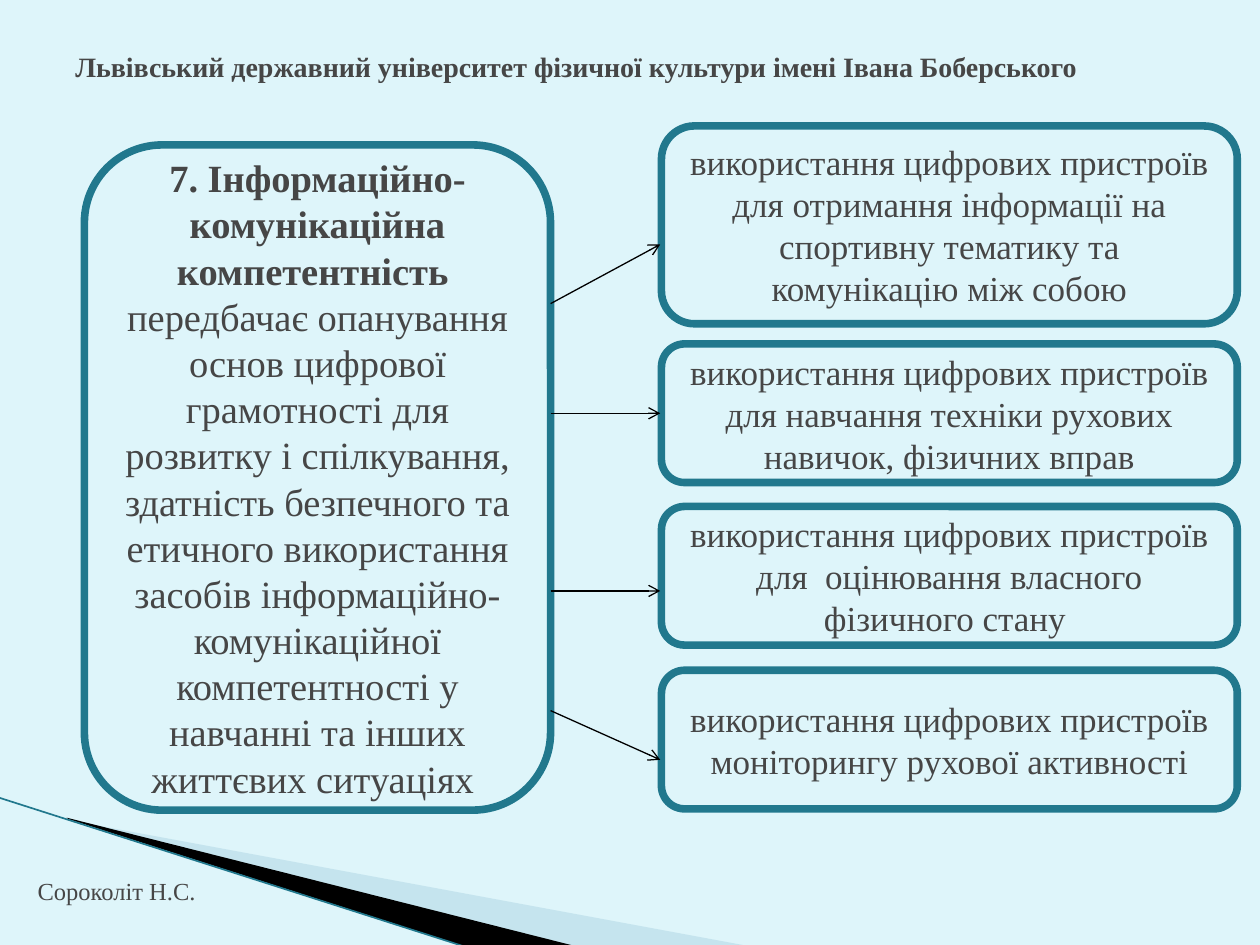
from lxml import etree
from pptx import Presentation
from pptx.dml.color import RGBColor
from pptx.enum.shapes import MSO_CONNECTOR, MSO_SHAPE
from pptx.enum.text import MSO_ANCHOR, PP_ALIGN
from pptx.oxml.ns import qn
from pptx.util import Inches, Pt

ROUND = MSO_SHAPE.ROUNDED_RECTANGLE
LINE = MSO_CONNECTOR.STRAIGHT
MID = MSO_ANCHOR.MIDDLE
TOP = MSO_ANCHOR.TOP
LEFT = PP_ALIGN.LEFT
MIDDLE = PP_ALIGN.CENTER
PALE = RGBColor(0xDE, 0xF5, 0xFA)
MIST = RGBColor(0xA0, 0xCB, 0xDC)
TEAL = RGBColor(0x21, 0x78, 0x8D)
GREY = RGBColor(0x46, 0x46, 0x46)
BLACK = RGBColor(0, 0, 0)


def write(shape, *lines, size=20, bold=False, align=MIDDLE, anchor=MID, wrap=True):
    frame = shape.text_frame
    frame.word_wrap = wrap
    frame.vertical_anchor = anchor
    for i, line in enumerate(lines):
        para = frame.paragraphs[0] if i == 0 else frame.add_paragraph()
        para.alignment = align
        run = para.add_run()
        run.text = line
        run.font.name = "Times New Roman"
        run.font.size = Pt(size)
        run.font.bold = bold and i == 0
        run.font.color.rgb = GREY


def connect(x1, y1, x2, y2, color, width):
    line = slide.shapes.add_connector(LINE, Inches(x1), Inches(y1), Inches(x2), Inches(y2))
    line.line.color.rgb = color
    line.line.width = Pt(width)
    etree.SubElement(line._element.spPr, qn("a:effectLst"))
    return line


deck = Presentation()
deck.slide_width = Inches(10)
deck.slide_height = Inches(7.5)
slide = deck.slides.add_slide(deck.slide_layouts[6])
slide.background.fill.solid()
slide.background.fill.fore_color.rgb = PALE

wedges = [
    ([(0.55, 6.51), (5.95, 7.51), (4.56, 7.51), (0.55, 6.5)], MIST),
    ([(0.53, 6.49), (4.57, 7.51), (3.72, 7.52), (0.54, 6.5)], BLACK),
]
for points, color in wedges:
    spots = [(Inches(x), Inches(y)) for x, y in points]
    path = slide.shapes.build_freeform(*spots[0], scale=1.0)
    path.add_line_segments(spots[1:], close=True)
    wedge = path.convert_to_shape()
    wedge.shadow.inherit = False
    wedge.fill.solid()
    wedge.fill.fore_color.rgb = color
    wedge.line.fill.background()
    if color == MIST:
        tint = wedge._element.spPr.find(".//" + qn("a:srgbClr"))
        etree.SubElement(tint, qn("a:alpha"), val="40000")
connect(-0.01, 6.33, 3.71, 7.52, TEAL, 0.95)

title = slide.shapes.add_textbox(Inches(0.5), Inches(0.3), Inches(9), Inches(0.46))
write(title, "Львівський державний університет фізичної культури імені Івана Боберського",
      size=16, bold=True, align=LEFT)
author = slide.shapes.add_textbox(Inches(0.2), Inches(6.9), Inches(1.47), Inches(0.34))
write(author, "Сороколіт Н.С.", size=14, align=LEFT, anchor=TOP, wrap=False)

skill = [
    "7. Інформаційно-комунікаційна компетентність ",
    "передбачає опанування основ цифрової грамотності для розвитку і спілкування, "
    "здатність безпечного та етичного використання засобів "
    "інформаційно-комунікаційної компетентності у навчанні та інших життєвих ситуаціях ",
]
USE = "використання цифрових пристроїв "
cards = [
    (0.67, 1.15, 3.7, 5.28, 22, skill),
    (5.25, 1, 4.57, 1.57, 20,
     [USE + "для отримання інформації на спортивну тематику та комунікацію між собою"]),
    (5.25, 2.73, 4.57, 1.1, 20,
     [USE + "для навчання техніки рухових навичок, фізичних вправ"]),
    (5.25, 4.02, 4.57, 1.1, 20,
     [USE + "для  оцінювання власного фізичного стану "]),
    (5.25, 5.32, 4.57, 1.1, 20, [USE + "моніторингу рухової активності"]),
]
for x, y, wide, high, size, lines in cards:
    card = slide.shapes.add_shape(ROUND, Inches(x), Inches(y), Inches(wide), Inches(high))
    card.shadow.inherit = False
    card.fill.solid()
    card.fill.fore_color.rgb = PALE
    card.line.color.rgb = TEAL
    card.line.width = Pt(4.33)
    write(card, *lines, size=size, bold=lines is skill)

for start, end in [(2.41, 1.94), (3.28, 3.28), (4.69, 4.69), (5.64, 6.03)]:
    arrow = connect(4.37, start, 5.24, end, BLACK, 0.75)
    etree.SubElement(arrow.line._get_or_add_ln(), qn("a:tailEnd"), type="arrow")

deck.save("out.pptx")
